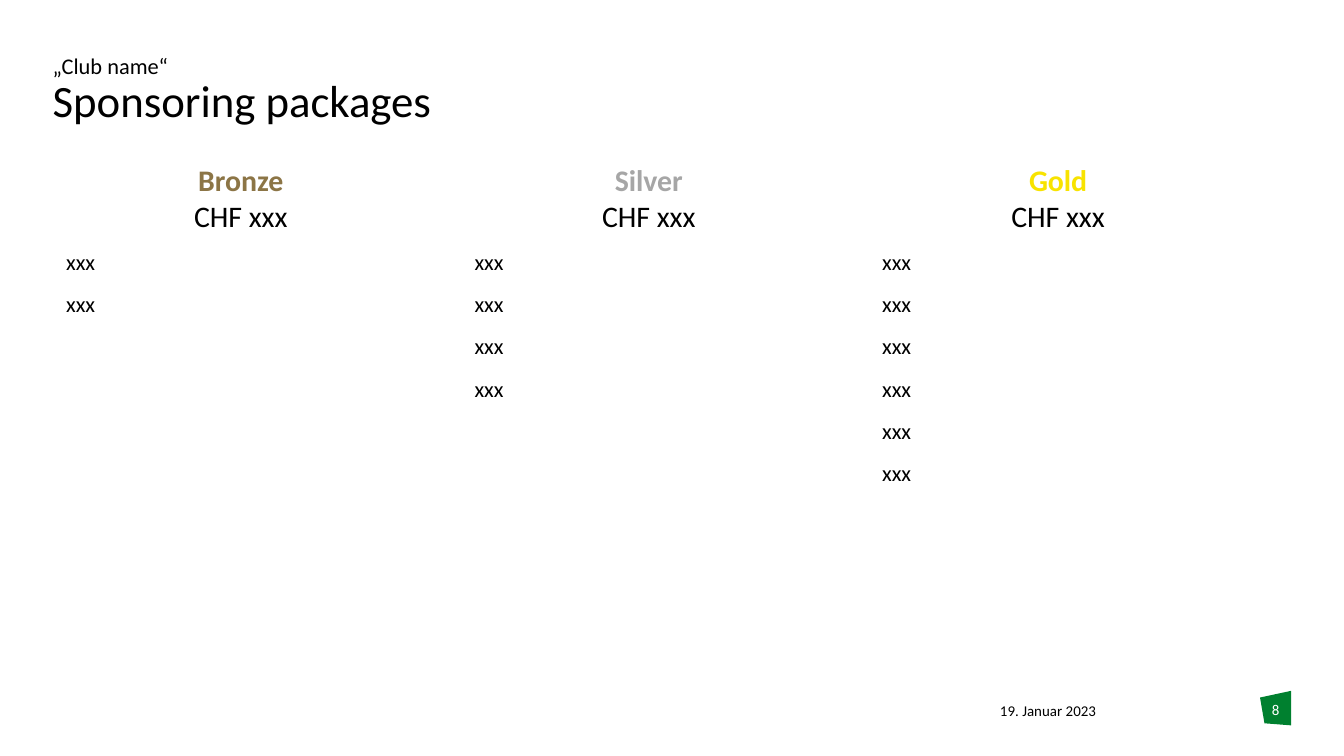
"""Build the slide that compares the three sponsoring packages."""
import lxml.etree
import pptx
import pptx.dml.color
import pptx.enum.text
import pptx.oxml.ns
import pptx.util

Pt = pptx.util.Pt
ALIGN = pptx.enum.text.PP_ALIGN
BLACK, WHITE, GREEN = "000000", "FFFFFF", "00802F"
PACKAGES = [("Bronze", "8C7546", 2), ("Silver", "A6A6A6", 4), ("Gold", "F8E300", 6)]
COLUMN_WIDTHS = [201.6, 17.1, 201.1, 16.9, 203]
HEADER_HEIGHT, BENEFIT_HEIGHT, BENEFIT_ROWS = 45.4, 22.65, 10


def set_values(target, values):
    """Set each attribute named in values on the target."""
    for name, value in values.items():
        setattr(target, name, value)


def paint(color_format, color):
    """Give a font or fill colour a hex value."""
    color_format.rgb = pptx.dml.color.RGBColor.from_string(color)


def fill_solid(part, color):
    """Fill a shape or cell with one colour."""
    part.fill.solid()
    paint(part.fill.fore_color, color)


def add_run(paragraph, text, size, color=BLACK, bold=False):
    """Append formatted text to a paragraph."""
    run = paragraph.add_run()
    run.text = text
    set_values(run.font, {"name": "Calibri", "size": Pt(size), "bold": bold})
    paint(run.font.color, color)


def set_mark_size(element, tag, size):
    """Set the text size of a line break or an empty paragraph."""
    mark = lxml.etree.SubElement(element, pptx.oxml.ns.qn(tag))
    mark.set("sz", str(size * 100))


def set_frame(frame):
    """Remove the insets and anchor the text at the top."""
    set_values(frame, {
        "margin_left": 0, "margin_top": 0, "margin_right": 0, "margin_bottom": 0,
        "word_wrap": True, "auto_size": pptx.enum.text.MSO_AUTO_SIZE.NONE,
        "vertical_anchor": pptx.enum.text.MSO_ANCHOR.TOP,
    })


def add_title(slide, club, heading):
    """Place the club name and the heading in the title placeholder."""
    title = slide.shapes.title
    set_values(title, {"left": Pt(28.2), "top": Pt(29.5), "width": Pt(664), "height": Pt(48.2)})
    set_frame(title.text_frame)
    paragraph = title.text_frame.paragraphs[0]
    set_values(paragraph, {"alignment": ALIGN.LEFT, "line_spacing": 0.9})
    add_run(paragraph, club, 12)
    paragraph.add_line_break()
    set_mark_size(paragraph._p[-1], "a:rPr", 12)
    add_run(paragraph, heading, 24)


def add_label(slide, text, box, color, alignment):
    """Add a small footer text."""
    label = slide.shapes.add_textbox(*map(Pt, box))
    set_frame(label.text_frame)
    paragraph = label.text_frame.paragraphs[0]
    paragraph.alignment = alignment
    add_run(paragraph, text, 8, color)


def add_badge(slide, corners):
    """Draw the slanted field behind the page number."""
    start, *others = [(Pt(x), Pt(y)) for x, y in corners]
    builder = slide.shapes.build_freeform(*start)
    builder.add_line_segments(others, close=True)
    badge = builder.convert_to_shape()
    badge.shadow.inherit = False
    fill_solid(badge, GREEN)
    badge.line.fill.background()


def add_packages(slide):
    """Add the table of packages with gap columns between them."""
    table = slide.shapes.add_table(
        BENEFIT_ROWS + 1, len(COLUMN_WIDTHS), Pt(28.2), Pt(83.5), Pt(sum(COLUMN_WIDTHS)),
        Pt(HEADER_HEIGHT + BENEFIT_ROWS * BENEFIT_HEIGHT)).table
    set_values(table, {"first_row": False, "horz_banding": False})
    for column, width in zip(table.columns, COLUMN_WIDTHS):
        column.width = Pt(width)
    for index, row in enumerate(table.rows):
        row.height = Pt(BENEFIT_HEIGHT if index else HEADER_HEIGHT)
    for cell in table.iter_cells():
        fill_solid(cell, WHITE)
    for index, (name, color, benefits) in enumerate(PACKAGES):
        frame = table.cell(0, 2 * index).text_frame
        add_run(frame.paragraphs[0], name, 16, color, True)
        add_run(frame.add_paragraph(), "CHF xxx", 16)
        for paragraph in frame.paragraphs:
            paragraph.alignment = ALIGN.CENTER
        for row in range(1, benefits + 1):
            add_run(table.cell(row, 2 * index).text_frame.paragraphs[0], "xxx", 12)
    for cell in table.iter_cells():
        if not cell.text:
            set_mark_size(cell.text_frame.paragraphs[0]._p, "a:endParaRPr", 12)


def main():
    """Build and save the slide."""
    deck = pptx.Presentation()
    set_values(deck, {"slide_width": Pt(720), "slide_height": Pt(405)})
    slide = deck.slides.add_slide(deck.slide_layouts[5])
    add_badge(slide, [(675, 373.7), (691.7, 370.1), (691.7, 388.6), (677.4, 387.5)])
    add_label(slide, "19. Januar 2023", (535.7, 375.8, 92.9, 14.4), BLACK, ALIGN.LEFT)
    add_title(slide, "„Club name“", "Sponsoring packages")
    add_label(slide, "8", (675, 375.5, 16.7, 21.6), WHITE, ALIGN.CENTER)
    add_packages(slide)
    deck.save("out.pptx")


if __name__ == "__main__":
    main()
